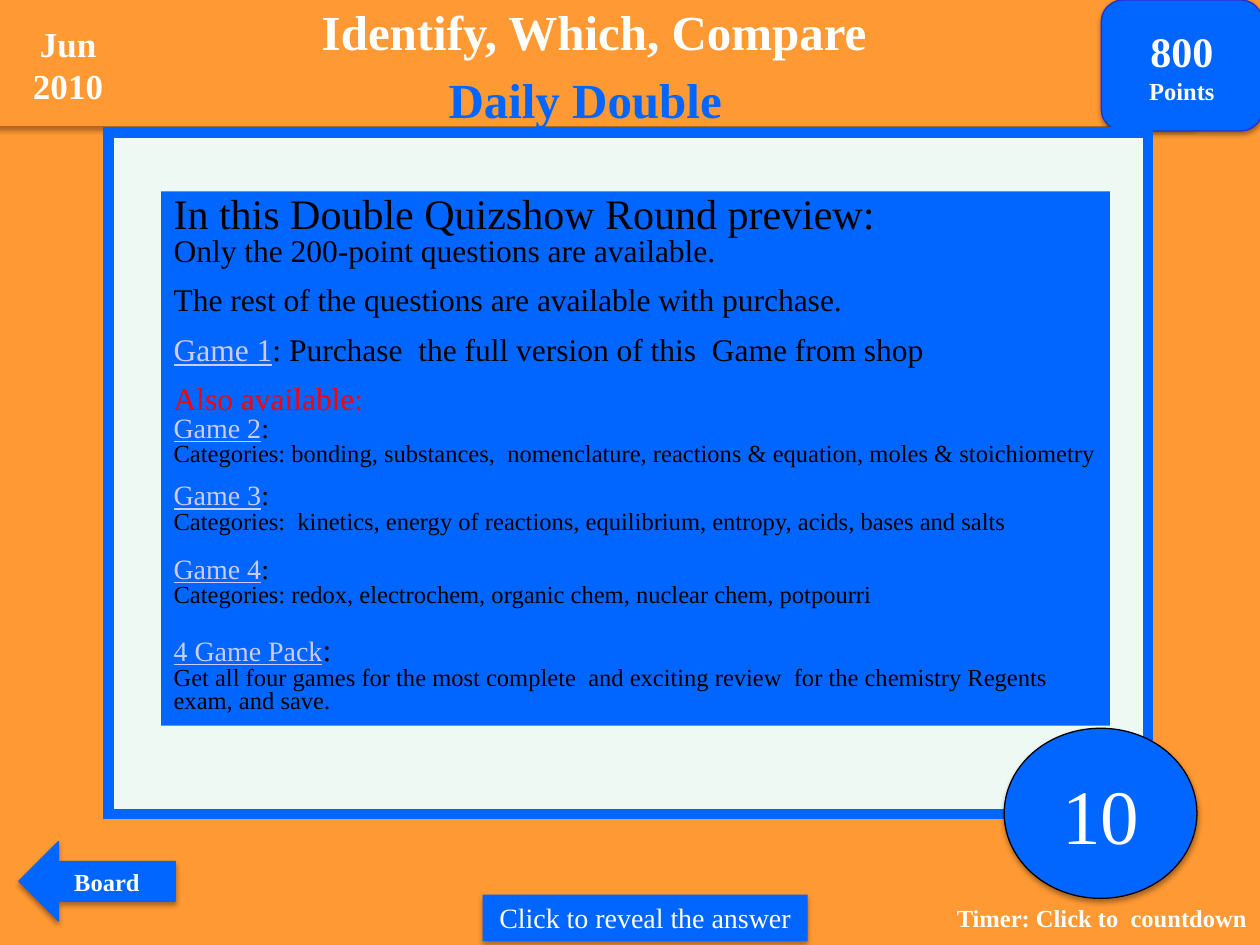
from lxml import etree
from pptx import Presentation
from pptx.dml.color import RGBColor
from pptx.enum.shapes import MSO_SHAPE
from pptx.enum.text import MSO_ANCHOR, MSO_AUTO_SIZE, PP_ALIGN
from pptx.oxml import parse_xml
from pptx.oxml.ns import nsdecls, qn
from pptx.util import Inches, Pt

RECTANGLE, ROUNDED = MSO_SHAPE.RECTANGLE, MSO_SHAPE.ROUNDED_RECTANGLE
OVAL, LEFT_ARROW = MSO_SHAPE.OVAL, MSO_SHAPE.LEFT_ARROW
TOP, MIDDLE = MSO_ANCHOR.TOP, MSO_ANCHOR.MIDDLE
LEFT, CENTER = PP_ALIGN.LEFT, PP_ALIGN.CENTER
NO_AUTOFIT = MSO_AUTO_SIZE.NONE

ORANGE = RGBColor(0xFF, 0x99, 0x33)
BLUE = RGBColor(0x00, 0x66, 0xFF)
INDIGO = RGBColor(0x2E, 0x2E, 0xCB)
MINT = RGBColor(0xEE, 0xF9, 0xF4)
LAVENDER = RGBColor(0xCC, 0xCC, 0xFF)
RED = RGBColor(0xFF, 0x00, 0x00)
WHITE = RGBColor(0xFF, 0xFF, 0xFF)
BLACK = RGBColor(0x00, 0x00, 0x00)
FONT = "Times New Roman"

INTRODUCTION = [
    (0, [("In this Double Quizshow Round preview:", 24, BLACK, False)]),
    (0, [("Only the 200-point questions are available.", 18, BLACK, False)]),
    (11, [("The rest of the questions are available with purchase.", 18, BLACK, False)]),
    (11, [("Game 1", 18, LAVENDER, True),
          (": Purchase  the full version of this  Game from shop", 18, BLACK, False)]),
    (11, [("Also available:", 18, RED, False)]),
]
GAMES = [
    (0, "Game 2", 16, "Categories: bonding, substances,  nomenclature, "
     "reactions & equation, moles & stoichiometry"),
    (9.9, "Game 3", 16, "Categories:  kinetics, energy of reactions, "
     "equilibrium, entropy, acids, bases and salts"),
    (13.1, "Game 4", 16, "Categories: redox, electrochem, organic chem, "
     "nuclear chem, potpourri"),
    (16.5, "4 Game Pack", 18, "Get all four games for the most complete  and "
     "exciting review  for the chemistry Regents exam, and save."),
]


def apply_format(target, values):
    """Set every attribute named in values on the target."""
    for name, value in values.items():
        setattr(target, name, value)


def place(shape, left, top, width, height):
    """Move and size a shape, in inches."""
    apply_format(shape, {"left": Inches(left), "top": Inches(top),
                         "width": Inches(width), "height": Inches(height)})


def add_shadow(shape, opacity=35, distance=1.8):
    """Give a shape a soft shadow that falls straight down."""
    shape.shadow.inherit = False
    effects = shape._element.spPr.find(qn("a:effectLst"))
    effects.append(parse_xml(
        f'<a:outerShdw {nsdecls("a")} blurRad="{Pt(3.1)}" dist="{Pt(distance)}" '
        f'dir="5400000" rotWithShape="0"><a:srgbClr val="000000">'
        f'<a:alpha val="{opacity * 1000}"/></a:srgbClr></a:outerShdw>'))


def add_panel(slide, kind, box, fill, line=None, line_width=0.75):
    """Add a filled preset shape with an optional outline."""
    shape = slide.shapes.add_shape(kind, *map(Inches, box))
    shape.shadow.inherit = False
    shape.fill.solid()
    shape.fill.fore_color.rgb = fill
    if line is None:
        shape.line.fill.background()
    else:
        shape.line.color.rgb = line
        shape.line.width = Pt(line_width)
    return shape


def add_run(paragraph, text, size, color, bold=False, underline=False):
    """Append one formatted run to a paragraph."""
    run = paragraph.add_run()
    run.text = text
    apply_format(run.font, {"name": FONT, "size": Pt(size), "bold": bold,
                            "underline": underline})
    run.font.color.rgb = color


def write_lines(shape, lines, color=WHITE, bold=True, anchor=TOP, align=CENTER, wrap=True):
    """Write one paragraph for each text and size pair."""
    frame = shape.text_frame
    apply_format(frame, {"word_wrap": wrap, "vertical_anchor": anchor,
                         "auto_size": NO_AUTOFIT})
    for index, (text, size) in enumerate(lines):
        paragraph = frame.add_paragraph() if index else frame.paragraphs[0]
        paragraph.alignment = align
        add_run(paragraph, text, size, color, bold)


def add_label(slide, box, text, size, **formats):
    """Add a wrapping text box with a single paragraph."""
    shape = slide.shapes.add_textbox(*map(Inches, box))
    write_lines(shape, [(text, size)], **formats)
    return shape


def add_title(slide):
    """Format the title placeholder as the header band."""
    title = slide.shapes.title
    place(title, -0.04, -0.04, 9.51, 1.04)
    title.fill.solid()
    title.fill.fore_color.rgb = ORANGE
    add_shadow(title)
    write_lines(title, [("Identify, Which, Compare", 28)])


def add_frame(slide):
    """Add the pale question area with its square-cornered border."""
    frame = add_panel(slide, RECTANGLE, (0.86, 1.05, 8.25, 5.41), MINT, BLUE, 6)
    outline = frame._element.spPr.find(qn("a:ln"))
    etree.SubElement(outline, qn("a:miter"), lim="800000")


def add_preview(slide):
    """Add the blue panel that lists the available games."""
    panel = add_panel(slide, RECTANGLE, (1.28, 1.52, 7.53, 4.24), BLUE)
    frame = panel.text_frame
    apply_format(frame, {"word_wrap": True, "vertical_anchor": TOP})
    paragraphs = list(INTRODUCTION)
    for gap, name, colon_size, description in GAMES:
        paragraphs.append((gap, [(name, 16, LAVENDER, True),
                                 (":", colon_size, BLACK, False)]))
        paragraphs.append((0, [(description, 14, BLACK, False)]))
    for index, (gap, runs) in enumerate(paragraphs):
        paragraph = frame.add_paragraph() if index else frame.paragraphs[0]
        apply_format(paragraph, {"alignment": LEFT, "line_spacing": 0.8,
                                 "space_before": Pt(gap)})
        for text, size, color, underline in runs:
            add_run(paragraph, text, size, color, underline=underline)


def main():
    """Build the slide and save it."""
    presentation = Presentation()
    apply_format(presentation, {"slide_width": Inches(10), "slide_height": Inches(7.5)})
    slide = presentation.slides.add_slide(presentation.slide_layouts[5])
    slide.background.fill.solid()
    slide.background.fill.fore_color.rgb = ORANGE

    add_title(slide)
    points = add_panel(slide, ROUNDED, (8.74, 0, 1.28, 1.04), BLUE, INDIGO)
    add_shadow(points, 38, 1.6)
    write_lines(points, [("800", 24), ("Points", 14)], anchor=MIDDLE, wrap=False)
    add_label(slide, (0.08, 0.13, 0.92, 0.77), "Jun 2010", 20)
    add_frame(slide)
    add_label(slide, (7.44, 7.12, 2.61, 0.34), "Timer: Click to  countdown", 14)

    button = add_panel(slide, RECTANGLE, (3.83, 7.1, 2.58, 0.37), BLUE)
    add_shadow(button)
    write_lines(button, [("Click to reveal the answer", 16)], bold=False)

    timer = add_panel(slide, OVAL, (7.97, 5.78, 1.53, 1.35), BLUE, BLACK)
    add_shadow(timer)
    write_lines(timer, [("10", 44)], bold=False, anchor=MIDDLE, wrap=False)

    daily_double = add_label(slide, (3.17, 0.5, 4.6, 0.57), "Daily Double", 28,
                             color=BLUE, align=LEFT)
    daily_double.text_frame.margin_left = Inches(0.39)

    board = add_panel(slide, LEFT_ARROW, (0.15, 6.68, 1.24, 0.63), BLUE, BLUE)
    add_shadow(board)
    write_lines(board, [("Board", 14)], anchor=MIDDLE, wrap=False)
    add_preview(slide)
    presentation.save("out.pptx")


if __name__ == "__main__":
    main()
